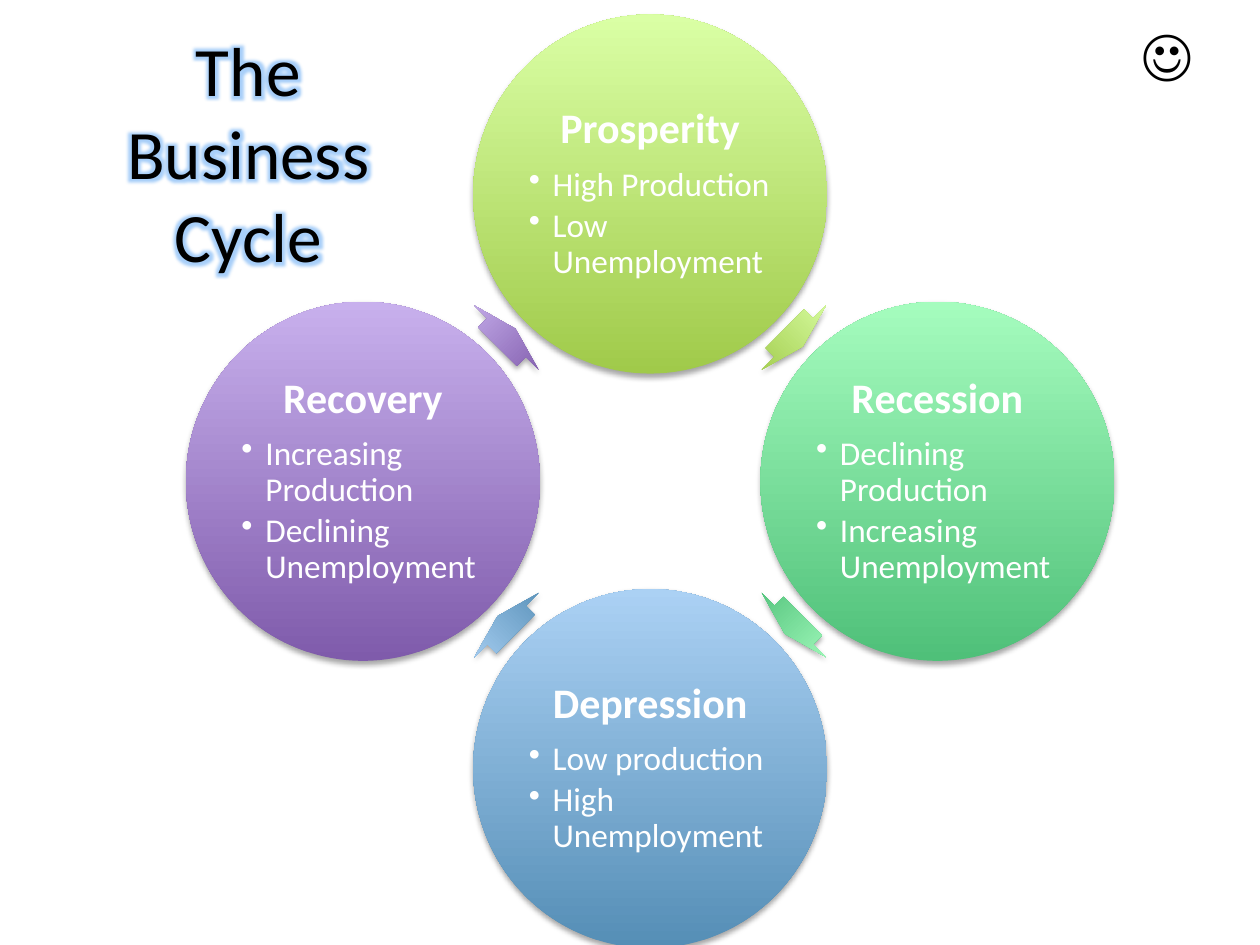
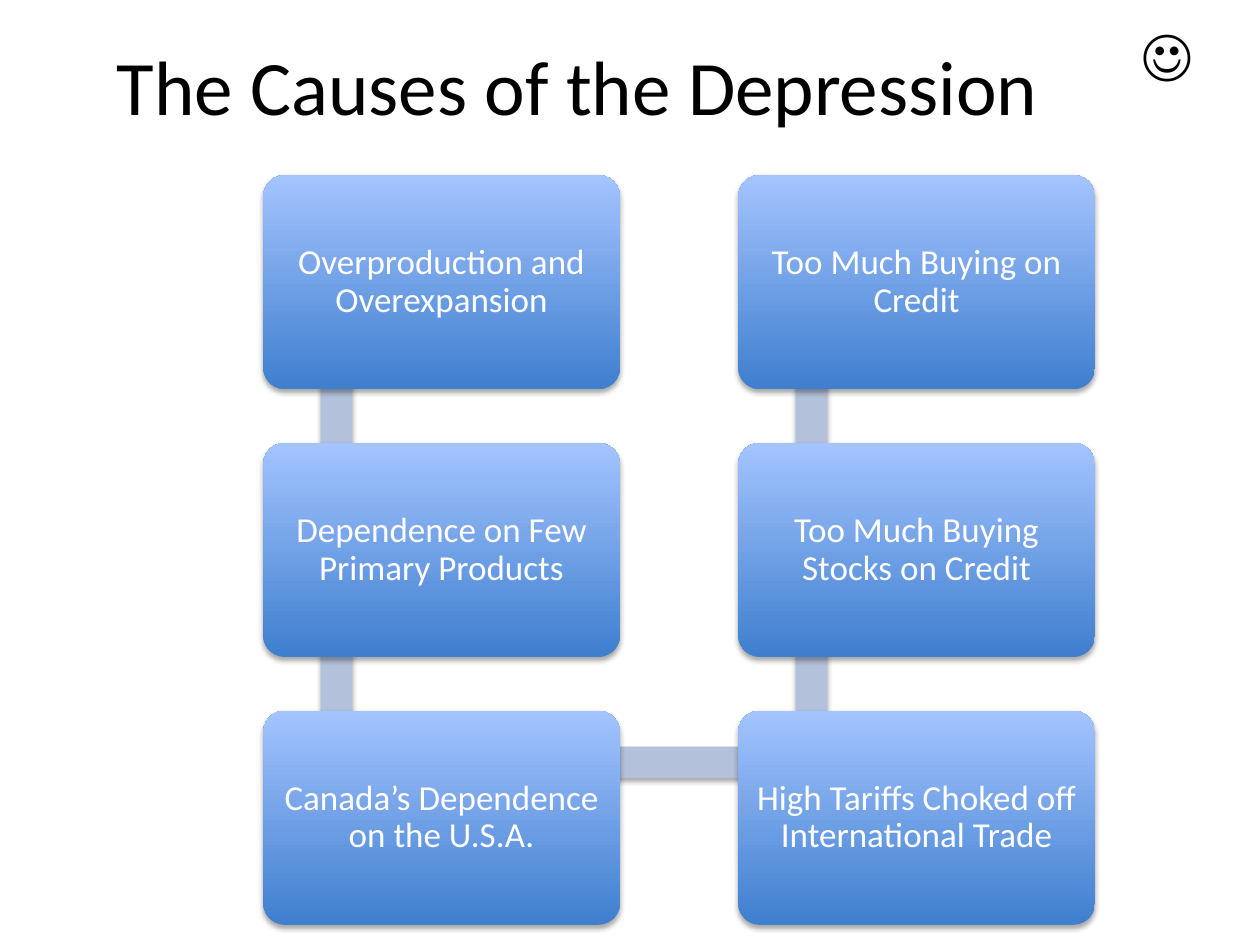
from math import atan2, cos, degrees, hypot, radians, sin
from lxml.etree import SubElement
from pptx import Presentation
from pptx.dml.color import RGBColor
from pptx.enum.shapes import MSO_SHAPE
from pptx.enum.text import MSO_ANCHOR, MSO_AUTO_SIZE, PP_ALIGN
from pptx.oxml import parse_xml
from pptx.oxml.ns import nsdecls, qn
from pptx.util import Inches, Pt

BLACK = RGBColor(0x00, 0x00, 0x00)
WHITE = RGBColor(0xFF, 0xFF, 0xFF)
GREEN = RGBColor(0xA0, 0xCA, 0x4A), RGBColor(0xDA, 0xFF, 0xA5)
MINT = RGBColor(0x4F, 0xC0, 0x79), RGBColor(0xA5, 0xFC, 0xBE)
STEEL = RGBColor(0x55, 0x8E, 0xB6), RGBColor(0xAB, 0xD1, 0xF4)
PURPLE = RGBColor(0x7F, 0x5B, 0xAB), RGBColor(0xC8, 0xB0, 0xED)
BLUE = RGBColor(0x3F, 0x7F, 0xCE), RGBColor(0xA4, 0xC4, 0xFF)
TRACK = RGBColor(0xB3, 0xC1, 0xDB)
GLOW = RGBColor(0x6E, 0xAF, 0xF5)
FONT = "Calibri"

CYCLE_TITLE = "The Business Cycle"
PHASES = [
    ("Prosperity", ["High Production", "Low Unemployment"], GREEN),
    ("Recession", ["Declining Production", "Increasing Unemployment"], MINT),
    ("Depression", ["Low production", "High Unemployment"], STEEL),
    ("Recovery", ["Increasing Production", "Declining Unemployment"], PURPLE),
]
CAUSES_TITLE = "The Causes of the Depression"
CAUSES = [
    ("Overproduction and Overexpansion", 0, 0),
    ("Dependence on Few Primary Products", 0, 1),
    ("Canada’s Dependence on the U.S.A.", 0, 2),
    ("High Tariffs Choked off International Trade", 1, 2),
    ("Too Much Buying Stocks on Credit", 1, 1),
    ("Too Much Buying on Credit", 1, 0),
]

CYCLE_X, CYCLE_Y, CYCLE_RADIUS = 5.16, 3.82, 2.28
CIRCLE_W, CIRCLE_H = 2.81, 2.85
ARROW_W, ARROW_H = 0.2, 0.72
GRID_LEFT, GRID_TOP = 2.09, 1.39
COLUMN_STEP, ROW_STEP = 3.77, 2.125
CAUSE_W, CAUSE_H = 2.83, 1.7
JOINT_X, JOINT_Y, TRACK_WIDTH = 0.58, 0.41, 0.25


def write(frame, text, size, color=WHITE, bold=False, align=PP_ALIGN.CENTER,
          spacing=None, after=None, bullet=False):
    paragraph = frame.paragraphs[0]
    if paragraph.runs:
        paragraph = frame.add_paragraph()
    if bullet:
        paragraph.level = 1
        properties = paragraph._p.get_or_add_pPr()
        properties.set("marL", str(Inches(0.19)))
        properties.set("indent", str(Inches(-0.19)))
        SubElement(properties, qn("a:buChar")).set("char", "•")
    paragraph.alignment = align
    if spacing:
        paragraph.line_spacing = spacing
    if after:
        paragraph.space_after = Pt(after)
    run = paragraph.add_run()
    run.text = text
    run.font.size = Pt(size)
    run.font.bold = bold
    run.font.color.rgb = color
    run.font.name = FONT
    return run


def prepare(frame, inset):
    frame.word_wrap = True
    frame.vertical_anchor = MSO_ANCHOR.MIDDLE
    frame.margin_left = frame.margin_right = Inches(inset)
    frame.margin_top = frame.margin_bottom = Inches(inset)
    return frame


def add_block(slide, kind, center_x, center_y, width, height, colors, rotation=0, adjust=()):
    block = slide.shapes.add_shape(kind, Inches(center_x - width / 2), Inches(center_y - height / 2),
                                   Inches(width), Inches(height))
    block.rotation = rotation
    for index, value in enumerate(adjust):
        block.adjustments[index] = value
    if isinstance(colors, RGBColor):
        block.fill.solid()
        block.fill.fore_color.rgb = colors
    else:
        block.fill.gradient()
        block.fill.gradient_angle = 90
        for stop, color in zip(block.fill.gradient_stops, colors):
            stop.color.rgb = color
    block.line.fill.background()
    block.shadow.inherit = False
    block._element.spPr.find(qn("a:effectLst")).append(parse_xml(
        f'<a:outerShdw {nsdecls("a")} blurRad="{Pt(3.1)}" dist="{Pt(1.8)}" dir="5400000" rotWithShape="0">'
        f'<a:srgbClr val="{BLACK}"><a:alpha val="35000"/></a:srgbClr></a:outerShdw>'))
    return block


def start_slide(deck, text, left, top, width, height, size):
    slide = deck.slides.add_slide(deck.slide_layouts[5])
    title = slide.shapes.title
    title.left, title.top = Inches(left), Inches(top)
    title.width, title.height = Inches(width), Inches(height)
    title.text_frame.auto_size = MSO_AUTO_SIZE.NONE
    title.text_frame.vertical_anchor = MSO_ANCHOR.MIDDLE
    return slide, write(title.text_frame, text, size, BLACK)


def add_smiley(slide):
    smiley = slide.shapes.add_textbox(Inches(8.96), Inches(0.1), Inches(0.58), Inches(0.64)).text_frame
    smiley.word_wrap = False
    smiley.auto_size = MSO_AUTO_SIZE.SHAPE_TO_FIT_TEXT
    write(smiley, "☺", 32, BLACK, align=PP_ALIGN.LEFT)


def build_cycle(deck):
    slide, heading = start_slide(deck, CYCLE_TITLE, 0.5, 0.3, 2.94, 1.81, 39.6)
    heading._r.rPr.find(qn("a:latin")).addprevious(parse_xml(
        f'<a:effectLst {nsdecls("a")}><a:glow rad="{Pt(8)}"><a:srgbClr val="{GLOW}">'
        f'<a:alpha val="60000"/></a:srgbClr></a:glow></a:effectLst>'))
    for index, (phase, signs, colors) in enumerate(PHASES):
        angle = radians(90 * index)
        circle = add_block(slide, MSO_SHAPE.OVAL, CYCLE_X + CYCLE_RADIUS * sin(angle),
                           CYCLE_Y - CYCLE_RADIUS * cos(angle), CIRCLE_W, CIRCLE_H, colors)
        frame = prepare(circle.text_frame, 0.03)
        write(frame, phase, 24, bold=True, spacing=0.9, after=8.4)
        for sign in signs:
            write(frame, sign, 19, align=PP_ALIGN.LEFT, spacing=0.9, after=2.85, bullet=True)
        turn = 90 * index + 45
        reach = CYCLE_RADIUS * cos(radians(45))
        add_block(slide, MSO_SHAPE.RIGHT_ARROW, CYCLE_X + reach * sin(radians(turn)),
                  CYCLE_Y - reach * cos(radians(turn)), ARROW_W, ARROW_H, colors, turn, (0.6, 0.5))
    add_smiley(slide)


def build_causes(deck):
    slide, _ = start_slide(deck, CAUSES_TITLE, 0.5, 0.05, 8.17, 1.25, 44)
    corners = [(GRID_LEFT + column * COLUMN_STEP, GRID_TOP + row * ROW_STEP) for _, column, row in CAUSES]
    for index, (cause, _, _) in enumerate(CAUSES):
        left, top = corners[index]
        if index + 1 < len(corners):
            next_left, next_top = corners[index + 1]
            run, drop = next_left - left, next_top - top
            add_block(slide, MSO_SHAPE.RECTANGLE, left + run / 2 + JOINT_X, top + drop / 2 + JOINT_Y,
                      hypot(run, drop), TRACK_WIDTH, TRACK, degrees(atan2(drop, run)) % 360)
        box = add_block(slide, MSO_SHAPE.ROUNDED_RECTANGLE, left + CAUSE_W / 2, top + CAUSE_H / 2,
                        CAUSE_W, CAUSE_H, BLUE, adjust=(0.1,))
        write(prepare(box.text_frame, 0.08), cause, 20, spacing=0.9, after=7)
    add_smiley(slide)


def main():
    deck = Presentation()
    deck.slide_width, deck.slide_height = Inches(10), Inches(7.5)
    build_cycle(deck)
    build_causes(deck)
    deck.save("out.pptx")


if __name__ == "__main__":
    main()
